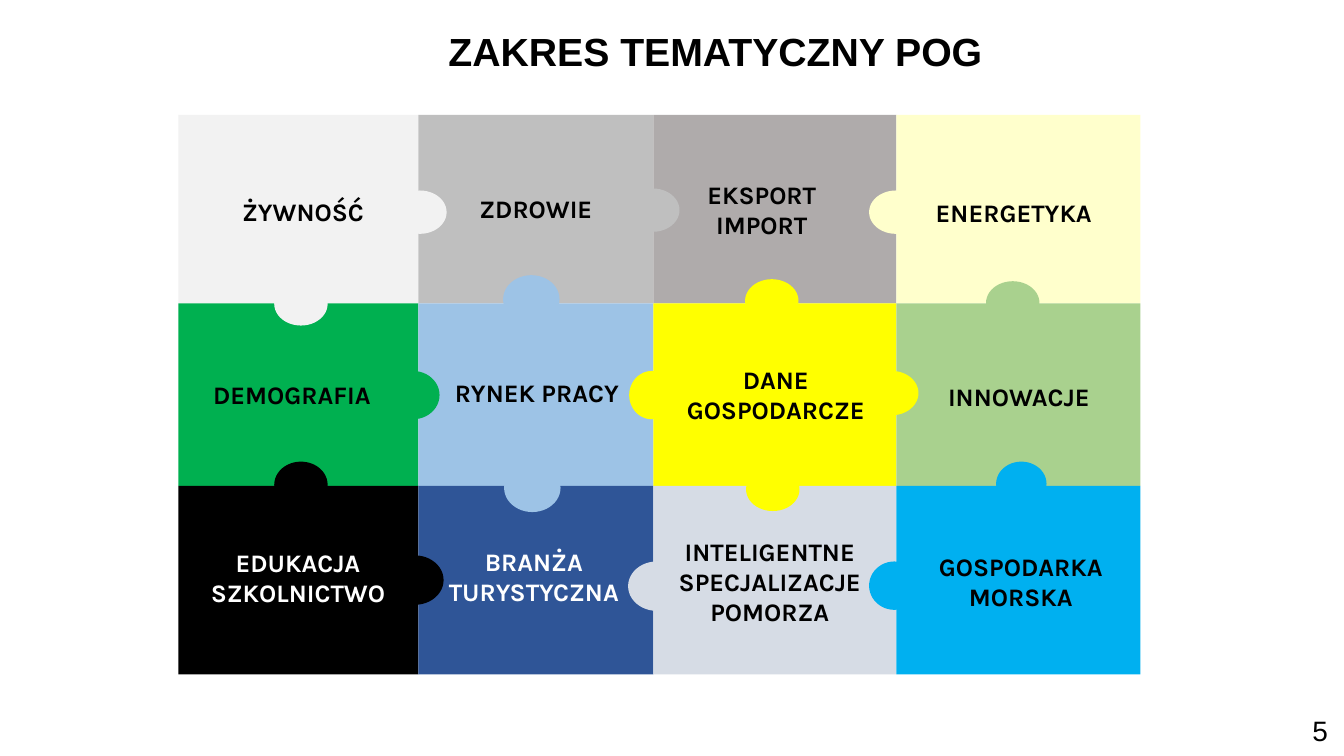
from pptx import Presentation
from pptx.dml.color import RGBColor
from pptx.enum.shapes import MSO_SHAPE
from pptx.enum.text import MSO_ANCHOR, PP_ALIGN
from pptx.util import Pt

RECT, OVAL = MSO_SHAPE.RECTANGLE, MSO_SHAPE.OVAL
LEFT, CENTER, RIGHT = PP_ALIGN.LEFT, PP_ALIGN.CENTER, PP_ALIGN.RIGHT
TOP, MIDDLE = MSO_ANCHOR.TOP, MSO_ANCHOR.MIDDLE

BLACK = RGBColor(0x00, 0x00, 0x00)
WHITE = RGBColor(0xFF, 0xFF, 0xFF)
PALE_GREY = RGBColor(0xF2, 0xF2, 0xF2)
GREY = RGBColor(0xBF, 0xBF, 0xBF)
WARM_GREY = RGBColor(0xAF, 0xAB, 0xAB)
CREAM = RGBColor(0xFF, 0xFF, 0xCC)
GREEN = RGBColor(0x00, 0xB0, 0x50)
LIGHT_BLUE = RGBColor(0x9D, 0xC3, 0xE6)
YELLOW = RGBColor(0xFF, 0xFF, 0x00)
LIGHT_GREEN = RGBColor(0xA9, 0xD1, 0x8E)
NAVY = RGBColor(0x2F, 0x55, 0x97)
BLUE_GREY = RGBColor(0xD6, 0xDC, 0xE5)
SKY = RGBColor(0x00, 0xB0, 0xF0)

PX = 9144  # EMU per px, 100 px to the inch
COLUMNS = [177, 415, 648, 889, 1131]
ROWS = [114, 301, 482, 669]
LABEL_W, LABEL_H = 233, 72

# Tiles by row: text, fill, text colour, label left and top
TILES = [
    [("ŻYWNOŚĆ", PALE_GREY, BLACK, 184, 174),
     ("ZDROWIE", GREY, BLACK, 415, 171),
     ("EKSPORT\nIMPORT", WARM_GREY, BLACK, 639, 172),
     ("ENERGETYKA", CREAM, BLACK, 889, 175)],
    [("DEMOGRAFIA", GREEN, BLACK, 173, 355),
     ("RYNEK PRACY", LIGHT_BLUE, BLACK, 416, 353),
     ("DANE GOSPODARCZE", YELLOW, BLACK, 653, 355),
     ("INNOWACJE", LIGHT_GREEN, BLACK, 894, 357)],
    [("EDUKACJA\nSZKOLNICTWO", BLACK, WHITE, 179, 537),
     ("BRANŻA\nTURYSTYCZNA", NAVY, WHITE, 413, 536),
     ("INTELIGENTNE\nSPECJALIZACJE\nPOMORZA", BLUE_GREY, BLACK, 647, 541),
     ("GOSPODARKA MORSKA", SKY, BLACK, 896, 541)],
]

# Puzzle knobs: left, top, width, height, fill
KNOBS = [
    (390, 189, 53, 43, PALE_GREY), (272, 280, 53, 43, PALE_GREY),
    (621, 187, 53, 43, GREY), (862, 189, 53, 43, CREAM),
    (383, 368, 53, 48, GREEN), (978, 279, 53, 43, LIGHT_GREEN),
    (499, 273, 56, 48, LIGHT_BLUE), (500, 460, 56, 48, LIGHT_BLUE),
    (739, 277, 53, 43, YELLOW), (740, 464, 53, 43, YELLOW),
    (624, 368, 45, 48, YELLOW), (858, 368, 53, 44, YELLOW),
    (272, 458, 53, 46, BLACK), (383, 551, 57, 49, BLACK),
    (623, 557, 57, 49, BLUE_GREY),
    (862, 557, 50, 48, SKY), (988, 458, 50, 44, SKY),
]


class Board:
    title_font = "Arial"
    label_font = "Karla"

    def __init__(self, prs):
        self.s = prs.slides.add_slide(prs.slide_layouts[6])

    def shape(self, kind, x, y, w, h, fill):
        sp = self.s.shapes.add_shape(kind, x * PX, y * PX, w * PX, h * PX)
        sp.shadow.inherit = False
        sp.fill.solid()
        sp.fill.fore_color.rgb = fill
        sp.line.fill.background()

    def text(self, x, y, w, h, text, size, font, color=BLACK, bold=False,
             align=LEFT, anchor=MIDDLE, spacing=1.0):
        sp = self.s.shapes.add_textbox(x * PX, y * PX, w * PX, h * PX)
        tf = sp.text_frame
        tf.word_wrap = True
        tf.vertical_anchor = anchor
        tf.text = text
        for p in tf.paragraphs:
            p.alignment = align
            p.line_spacing = spacing
            for r in p.runs:
                r.font.size = Pt(size)
                r.font.name = font
                r.font.bold = bold
                r.font.color.rgb = color

    def label(self, x, y, text, color):
        self.text(x, y, LABEL_W, LABEL_H, text, 18, self.label_font, color,
                  bold=True, align=CENTER)


def main():
    prs = Presentation()
    prs.slide_width, prs.slide_height = 1333 * PX, 750 * PX
    board = Board(prs)

    # Title and slide number
    board.text(435, 16, 553, 75, "ZAKRES TEMATYCZNY POG", 28,
               board.title_font, bold=True, spacing=0.9)
    board.text(1256, 703, 71, 42, "5", 20, board.title_font,
               align=RIGHT, anchor=TOP)

    # Tiles
    for row, y, bottom in zip(TILES, ROWS, ROWS[1:]):
        for tile, x, right in zip(row, COLUMNS, COLUMNS[1:]):
            board.shape(RECT, x, y, right - x, bottom - y, tile[1])

    # Knobs that join the tiles
    for x, y, w, h, fill in KNOBS:
        board.shape(OVAL, x, y, w, h, fill)

    # Labels
    for row in TILES:
        for text, _, color, x, y in row:
            board.label(x, y, text, color)

    prs.save("out.pptx")


if __name__ == "__main__":
    main()
